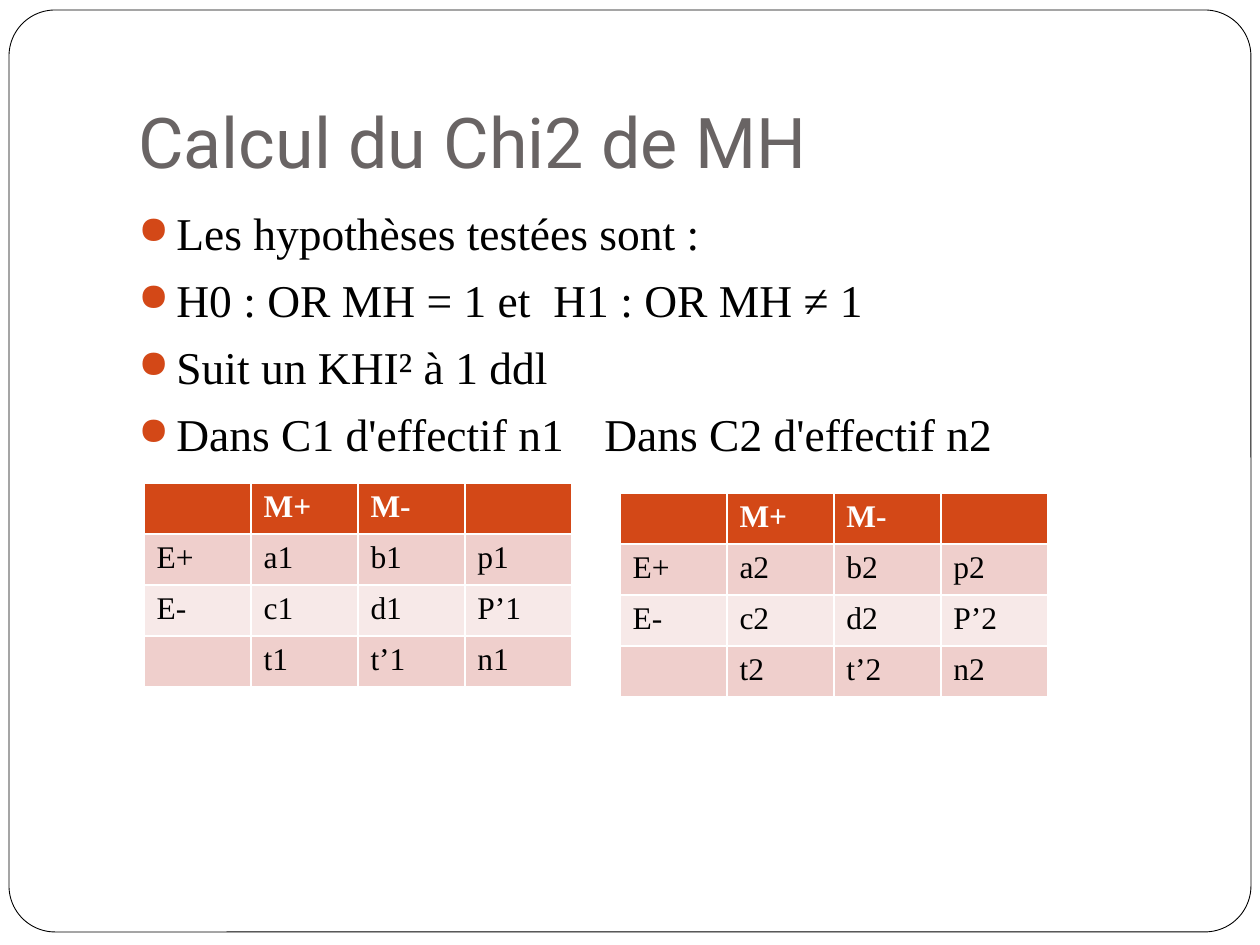
from lxml import etree
from pptx import Presentation
from pptx.dml.color import RGBColor
from pptx.enum.shapes import MSO_SHAPE
from pptx.enum.text import MSO_ANCHOR
from pptx.oxml.ns import qn
from pptx.util import Emu, Pt

ROUND = MSO_SHAPE.ROUNDED_RECTANGLE
TOP, BOTTOM = MSO_ANCHOR.TOP, MSO_ANCHOR.BOTTOM
SERIF = "Times New Roman"
ACCENT, BLACK, WHITE = "D34817", "000000", "FFFFFF"
BANDS = ["EFCFCC", "F7E9E8"]
COL, ROW = 107, 51
POINTS = [
    "Les hypothèses testées sont :",
    "H0 : OR MH = 1 et  H1 : OR MH ≠ 1",
    "Suit un KHI² à 1 ddl",
    "Dans C1 d'effectif n1\tDans C2 d'effectif n2",
]


def px(n):
    """Turn pixels into EMU."""
    return Emu(round(n * 914400 / 126))


def color(code):
    """Turn a hex string into a colour."""
    return RGBColor.from_string(code)


def style(para, name, size, code, bold=False):
    """Set the font of a paragraph."""
    font = para.font
    font.name, font.size, font.bold = name, Pt(size), bold
    font.color.rgb = color(code)


def add_frame(slide):
    """Draw the rounded border around the slide."""
    shape = slide.shapes.add_shape(ROUND, px(9), px(10), px(1242), px(922))
    shape.adjustments[0] = 0.05
    shape.shadow.inherit = False
    shape.fill.solid()
    shape.fill.fore_color.rgb = color(WHITE)
    shape.line.color.rgb = color(BLACK)
    shape.line.width = Pt(0.5)


def add_text(slide, top, height, anchor):
    """Add a wrapping text box and return its frame."""
    box = slide.shapes.add_textbox(px(126), px(top), px(1071), px(height))
    frame = box.text_frame
    frame.word_wrap = True
    frame.vertical_anchor = anchor
    return frame


def add_title(slide, text):
    """Write the slide title."""
    frame = add_text(slide, 38, 157, BOTTOM)
    frame.margin_bottom = px(13)
    frame.text = text
    style(frame.paragraphs[0], "Roboto", 40, "696464")


def add_bullet(para):
    """Give a paragraph its hanging bullet and its tab stop."""
    props = para._p.get_or_add_pPr()
    props.set("marL", str(px(38)))
    props.set("indent", str(px(-38)))
    tint = etree.Element(qn("a:buClr"))
    etree.SubElement(tint, qn("a:srgbClr"), val=ACCENT)
    size = etree.Element(qn("a:buSzPct"), val="85000")
    mark = etree.Element(qn("a:buChar"), char="●")
    tabs = etree.Element(qn("a:tabLst"))
    etree.SubElement(tabs, qn("a:tab"), pos=str(px(466)), algn="l")
    at = props.index(props.find(qn("a:defRPr")))
    props[at:at] = [tint, size, mark, tabs]


def add_points(slide, lines):
    """Write the bulleted list."""
    frame = add_text(slide, 199, 630, TOP)
    frame.text = "\n".join(lines)
    for para in frame.paragraphs:
        para.space_before = Pt(7)
        style(para, SERIF, 26, BLACK)
        add_bullet(para)


def add_grid(slide, left, top, rows):
    """Add a table with a header and banded rows."""
    high, wide = len(rows), len(rows[0])
    table = slide.shapes.add_table(
        high, wide, px(left), px(top), px(COL * wide), px(ROW * high)
    ).table
    for r, row in enumerate(rows):
        head = r == 0
        back = ACCENT if head else BANDS[(r - 1) % 2]
        for c, text in enumerate(row):
            cell = table.cell(r, c)
            cell.fill.solid()
            cell.fill.fore_color.rgb = color(back)
            cell.text = text
            ink = WHITE if head else BLACK
            style(cell.text_frame.paragraphs[0], SERIF, 18, ink, head)


def class_rows(n):
    """Return the table of counts for class n."""
    return [
        ["", "M+", "M-", ""],
        ["E+", f"a{n}", f"b{n}", f"p{n}"],
        ["E-", f"c{n}", f"d{n}", f"P’{n}"],
        ["", f"t{n}", f"t’{n}", f"n{n}"],
    ]


def main():
    """Build and save the slide."""
    deck = Presentation()
    deck.slide_width, deck.slide_height = px(1260), px(945)
    slide = deck.slides.add_slide(deck.slide_layouts[6])
    add_frame(slide)
    add_title(slide, "Calcul du Chi2 de MH")
    add_points(slide, POINTS)
    add_grid(slide, 144, 483, class_rows(1))
    add_grid(slide, 620, 493, class_rows(2))
    deck.save("out.pptx")


if __name__ == "__main__":
    main()
